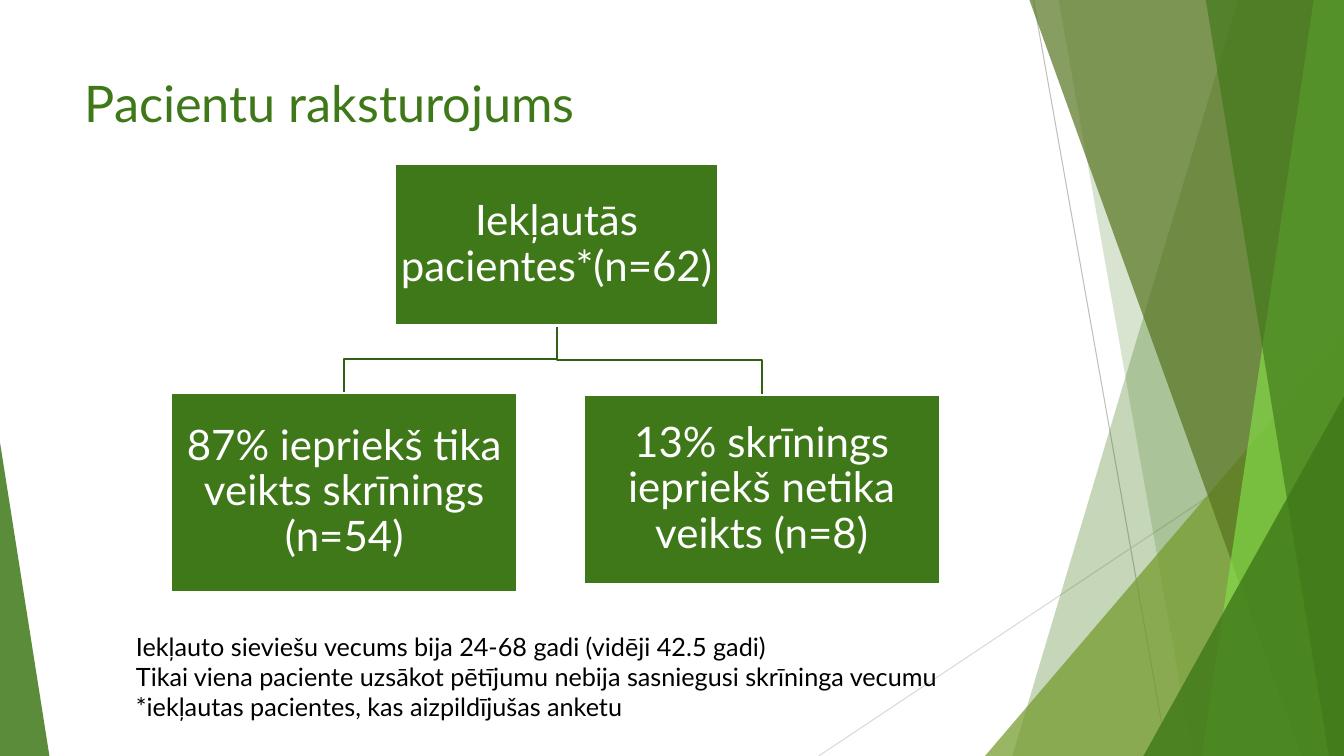
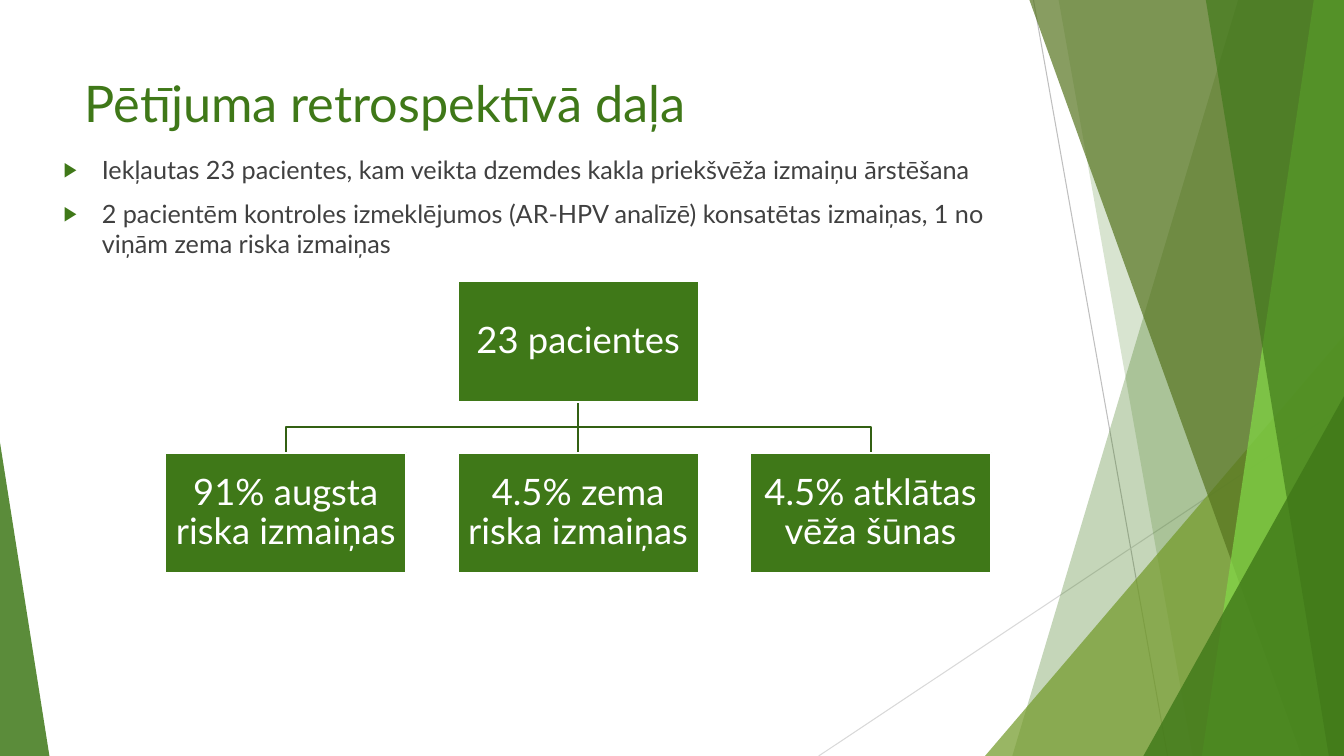
from lxml.etree import SubElement as Sub
from pptx import Presentation
from pptx.dml.color import RGBColor as RGB
from pptx.enum.shapes import MSO_CONNECTOR as Conn, MSO_SHAPE as Kind
from pptx.enum.text import MSO_ANCHOR as Anchor, MSO_AUTO_SIZE as Fit, PP_ALIGN as Align
from pptx.oxml.ns import qn
from pptx.util import Inches, Pt

GREEN = RGB(0x3F, 0x78, 0x18)
DARK = RGB(0x32, 0x60, 0x13)
OLIVE = RGB(0x56, 0x74, 0x1F)
MOSS = RGB(0x73, 0x9A, 0x29)
LIME = RGB(0x83, 0xDA, 0x48)
SILVER = RGB(0xBF, 0xBF, 0xBF)
PALE = RGB(0xD9, 0xD9, 0xD9)
GREY = RGB(0x40, 0x40, 0x40)
WHITE = RGB(0xFF, 0xFF, 0xFF)
BLACK = RGB(0, 0, 0)

WIDE, HIGH = 13.33, 7.5
ONLY, LIST = 5, 1


class Deck:
    """Hold the shared style and the current slide."""

    def __init__(self):
        self.file = Presentation()
        self.file.slide_width = Inches(WIDE)
        self.file.slide_height = Inches(HIGH)
        self.slide = None

    def page(self, title, layout):
        self.slide = self.file.slides.add_slide(self.file.slide_layouts[layout])
        holders = list(self.slide.placeholders)
        self.backdrop()
        for holder in holders:
            self.slide.shapes.element.append(holder.element)
        self.fill_in(self.slide.shapes.title, (0.74, 0.67, 9.4, 1.44), [title], 36, GREEN)

    def backdrop(self):
        self.line((10.25, 0), (11.58, HIGH), SILVER, 0.75)
        self.line((WIDE, 4.03), (8.12, HIGH), PALE, 0.75)
        self.band(12.28, 10.04, GREEN, 30)
        self.band(10.5, 11.83, GREEN, 20)
        self.wedge(9.77, 3.33, 3.56, 1, MOSS, 72)
        self.band(10.21, 12.91, OLIVE, 70)
        self.band(13.03, 11.92, LIME, 70)
        self.band(11.96, 13.18, GREEN, 65)
        self.wedge(11.34, 3.93, 1.99, 1, GREEN, 80)
        self.wedge(0, 4.39, 0.49, 0, GREEN, 85)

    def band(self, top, foot, color, alpha):
        points = [(top, 0), (WIDE, 0), (WIDE, HIGH), (foot, HIGH)]
        self.tint(self.trace(points, True), color, alpha)

    def wedge(self, x, y, w, peak, color, alpha):
        area = map(Inches, (x, y, w, HIGH - y))
        shape = self.slide.shapes.add_shape(Kind.ISOSCELES_TRIANGLE, *area)
        shape.adjustments[0] = peak
        self.tint(shape, color, alpha)

    def trace(self, points, close):
        first, *rest = [(Inches(x), Inches(y)) for x, y in points]
        pen = self.slide.shapes.build_freeform(*first)
        pen.add_line_segments(rest, close=close)
        shape = pen.convert_to_shape()
        shape.shadow.inherit = False
        return shape

    def tint(self, shape, color, alpha):
        shape.shadow.inherit = False
        shape.line.fill.background()
        shape.fill.solid()
        shape.fill.fore_color.rgb = color
        tone = shape.element.spPr.find(".//" + qn("a:srgbClr"))
        Sub(tone, qn("a:alpha"), val=str(alpha * 1000))

    def line(self, start, end, color, width):
        ends = map(Inches, (*start, *end))
        line = self.slide.shapes.add_connector(Conn.STRAIGHT, *ends)
        line.line.color.rgb = color
        line.line.width = Pt(width)
        Sub(line.element.spPr, qn("a:effectLst"))

    def link(self, start, end):
        (x, y), (x2, y2) = start, end
        if x == x2:
            self.line(start, end, DARK, 1.5)
            return
        mid = (y + y2) / 2
        shape = self.trace([start, (x, mid), (x2, mid), end], False)
        shape.fill.background()
        shape.line.color.rgb = DARK
        shape.line.width = Pt(1.5)

    def box(self, text, area, size):
        shape = self.slide.shapes.add_shape(Kind.RECTANGLE, *map(Inches, area))
        shape.shadow.inherit = False
        shape.fill.solid()
        shape.fill.fore_color.rgb = GREEN
        shape.line.color.rgb = WHITE
        shape.line.width = Pt(1.5)
        frame = shape.text_frame
        frame.margin_left = frame.margin_right = Inches(0.02)
        frame.margin_top = frame.margin_bottom = Inches(0.02)
        self.put(frame, [text], size, WHITE, Align.CENTER, Anchor.MIDDLE)
        frame.paragraphs[0].line_spacing = 0.9

    def tree(self, root, kids, size):
        x, y, w, h = root[1]
        for _, (left, top, wide, _) in kids:
            self.link((x + w / 2, y + h), (left + wide / 2, top))
        for text, area in [root, *kids]:
            self.box(text, area, size)

    def put(self, frame, texts, size, color, align=Align.LEFT, anchor=Anchor.TOP):
        frame.word_wrap = True
        frame.auto_size = Fit.NONE
        frame.vertical_anchor = anchor
        frame.text = "\n".join(texts)
        for para in frame.paragraphs:
            para.alignment = align
            para.font.name = "Lato"
            para.font.size = Pt(size)
            para.font.color.rgb = color

    def fill_in(self, holder, area, texts, size, color):
        holder.left, holder.top, holder.width, holder.height = map(Inches, area)
        self.put(holder.text_frame, texts, size, color)

    def note(self, area, texts):
        shape = self.slide.shapes.add_textbox(*map(Inches, area))
        self.put(shape.text_frame, texts, 18, BLACK)

    def points(self, area, texts):
        holder = self.slide.placeholders[1]
        self.fill_in(holder, area, texts, 18, GREY)
        for para in holder.text_frame.paragraphs:
            para.space_before = Pt(10)
            self.bullet(para)

    def bullet(self, para):
        props = para._p.get_or_add_pPr()
        props.set("marL", str(Inches(0.38)))
        props.set("indent", str(-Inches(0.38)))
        font = props.find(qn("a:defRPr"))
        Sub(Sub(props, qn("a:buClr")), qn("a:srgbClr"), val=str(GREEN))
        Sub(props, qn("a:buSzPct"), val="80000")
        Sub(props, qn("a:buChar"), char="▶")
        props.append(font)


def main():
    deck = Deck()
    deck.page("Pacientu raksturojums", ONLY)
    deck.tree(
        ("Iekļautās pacientes*(n=62)", (3.92, 1.63, 3.2, 1.6)),
        [
            ("87% iepriekš tika veikts skrīnings (n=54)", (1.7, 3.9, 3.43, 1.97)),
            ("13% skrīnings iepriekš netika veikts (n=8)", (5.79, 3.92, 3.53, 1.87)),
        ],
        30,
    )
    deck.note((1.25, 6.21, 8.51, 1.01), [
        "Iekļauto sieviešu vecums bija 24-68 gadi (vidēji 42.5 gadi)",
        "Tikai viena paciente uzsākot pētījumu nebija sasniegusi skrīninga vecumu",
        "*iekļautas pacientes, kas aizpildījušas anketu",
    ])

    deck.page("Pētījuma retrospektīvā daļa", LIST)
    deck.points((0.53, 1.48, 9.4, 4.24), [
        "Iekļautas 23 pacientes, kam veikta dzemdes kakla priekšvēža izmaiņu ārstēšana",
        "2 pacientēm kontroles izmeklējumos (AR-HPV analīzē) konsatētas izmaiņas, "
        "1 no viņām zema riska izmaiņas",
    ])
    mid, step, w, h = 4.54, 2.9, 2.39, 1.2
    kids = ["91% augsta riska izmaiņas", "4.5% zema riska izmaiņas", "4.5% atklātas vēža šūnas"]
    deck.tree(
        ("23 pacientes", (mid, 2.79, w, h)),
        [(text, (mid + (i - 1) * step, 4.49, w, h)) for i, text in enumerate(kids)],
        26,
    )
    deck.file.save("out.pptx")


if __name__ == "__main__":
    main()
